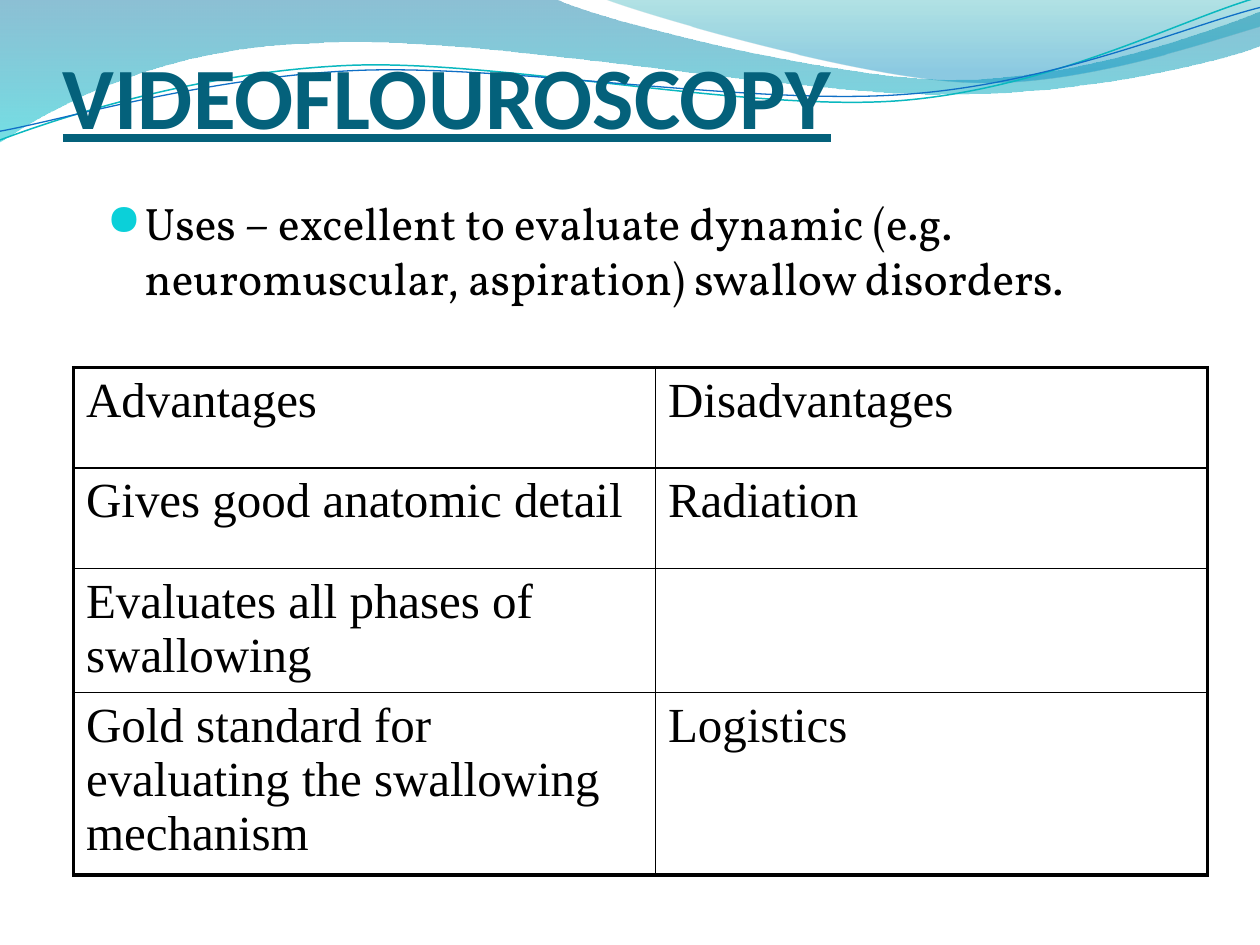
import pptx
import pptx.dml.color
import pptx.enum.text
import pptx.oxml.ns
import pptx.util
from lxml import etree

Pt = pptx.util.Pt
qn = pptx.oxml.ns.qn
COLORS = {
    "title": "04617B", "text": "000000", "bullet": "0BD0D9",
    "line_teal": "0AB8BF", "line_blue": "0F6FC6",
    "wave_top": "0074A1", "wave_bottom": "00C6CF",
    "crest_top": "00A1A9", "crest_bottom": "008BBF",
}


def color(name):
    return pptx.dml.color.RGBColor.from_string(COLORS[name])


def write_text(frame, text, font, size, fill="text", bold=False, underline=False):
    frame.word_wrap = True
    paragraph = frame.paragraphs[0]
    run = paragraph.add_run()
    run.text = text
    run.font.name = font
    run.font.size = Pt(size)
    run.font.bold = bold
    run.font.underline = underline
    run.font.color.rgb = color(fill)
    return paragraph


def add_curve(shapes, start, segments, closed):
    """Draw straight (2 numbers) and cubic Bezier (6 numbers) segments, in points."""
    builder = shapes.build_freeform(Pt(start[0]), Pt(start[1]))
    for segment in segments:
        pairs = zip(segment[::2], segment[1::2])
        builder.add_line_segments([(Pt(x), Pt(y)) for x, y in pairs], close=False)
    if closed:
        builder.add_line_segments([], close=True)
    shape = builder.convert_to_shape()
    shape.shadow.inherit = False
    lines = iter(shape._element.findall(".//" + qn("a:lnTo")))
    for segment in segments:
        parts = [next(lines) for _ in range(len(segment) // 2)]
        if len(parts) == 3:
            curve = etree.Element(qn("a:cubicBezTo"))
            parts[0].addprevious(curve)
            for part in parts:
                curve.append(part[0])
                part.getparent().remove(part)
    return shape


presentation = pptx.Presentation()
presentation.slide_width = Pt(720)
presentation.slide_height = Pt(540)
slide = presentation.slides.add_slide(presentation.slide_layouts[6])

# Wave bands: start, segments, gradient stops (position, colour, opacity %)
bands = [
    ((0, 0),
     [(317, -0.7), (343, 12, 478, 45.4, 546, 45.4), (614, 45.4, 690, 18.7, 720, 6.5),
      (720.7, 26), (708, 31.7, 626, 54.7, 537, 54), (448, 54, 275, 20.2, 185, 24.5),
      (93, 26, 33, 59.8, -0.7, 81.4), (0, 0)],
     [(0, "wave_top", 45), (1, "wave_bottom", 55)]),
    ((345, -0.7),
     [(366.5, 8, 491, 44.6, 553.7, 46.8), (616, 49.7, 692, 23, 720, 15), (720, 0),
      (345, -0.7)],
     [(0, "crest_top", 30), (0.8, "crest_bottom", 45)]),
]
for start, segments, stops in bands:
    band = add_curve(slide.shapes, start, segments, closed=True)
    band.line.fill.background()
    band.fill.gradient()
    band.fill.gradient_angle = 270
    for stop, (position, name, _) in zip(band.fill.gradient_stops, stops):
        stop.position = position
        stop.color.rgb = color(name)
    stop_colors = band._element.spPr.findall(".//" + qn("a:gs") + "/" + qn("a:srgbClr"))
    for element, (_, _, opacity) in zip(stop_colors, stops):
        etree.SubElement(element, qn("a:alpha"), val=str(opacity * 1000))

wave_lines = [
    ((0, 80), [(34.6, 67, 113.8, 41, 199.4, 37.4), (284.4, 33.8, 427, 64, 513.4, 57.6),
               (599.8, 51, 675.4, 10.8, 718.6, -1.4)], "line_teal", 0.85),
    ((0, 75), [(33.8, 69, 118, 44, 203.8, 40.3), (290, 36.7, 430, 60.5, 516.2, 54),
               (602, 48.2, 677.5, 15, 720, 4.3)], "line_blue", 0.75),
]
for start, segments, name, width in wave_lines:
    wave = add_curve(slide.shapes, start, segments, closed=False)
    wave.fill.background()
    wave.line.color.rgb = color(name)
    wave.line.width = Pt(width)

title = slide.shapes.add_textbox(Pt(36), Pt(-6), Pt(648), Pt(90)).text_frame
title.margin_left = title.margin_right = title.margin_bottom = 0
title.vertical_anchor = pptx.enum.text.MSO_ANCHOR.BOTTOM
write_text(title, "VIDEOFLOUROSCOPY", "Calibri", 50, fill="title", bold=True, underline=True)

body = slide.shapes.add_textbox(Pt(54), Pt(108), Pt(612), Pt(139)).text_frame
paragraph = write_text(
    body, "Uses – excellent to evaluate dynamic (e.g. neuromuscular, aspiration) swallow disorders.",
    "Vollkorn", 26)
properties = paragraph._p.get_or_add_pPr()
properties.set("marL", str(Pt(21.6)))
properties.set("indent", str(Pt(-21.6)))
bullet_color = etree.SubElement(properties, qn("a:buClr"))
etree.SubElement(bullet_color, qn("a:srgbClr"), val=COLORS["bullet"])
etree.SubElement(properties, qn("a:buSzPct"), val="95000")
etree.SubElement(properties, qn("a:buFont"), typeface="OpenSymbol")
etree.SubElement(properties, qn("a:buChar"), char="●")

rows = [
    ("Advantages", "Disadvantages"),
    ("Gives good anatomic detail", "Radiation"),
    ("Evaluates all phases of swallowing", ""),
    ("Gold standard for evaluating the swallowing mechanism", "Logistics"),
]
row_heights = [57.4, 57.4, 70.4, 102.8]
column_widths = [332.6, 315.4]
table = slide.shapes.add_table(len(rows), 2, Pt(42), Pt(210), Pt(648), Pt(288)).table
table.first_row = table.horz_banding = False
for column, width in zip(table.columns, column_widths):
    column.width = Pt(width)
for row_index, (row, height) in enumerate(zip(rows, row_heights)):
    table.rows[row_index].height = Pt(height)
    for column_index, text in enumerate(row):
        cell = table.cell(row_index, column_index)
        cell.margin_bottom = 0
        if text:
            write_text(cell.text_frame, text, "Times New Roman", 28)
        outer_sides = {"a:lnL": column_index == 0, "a:lnR": column_index == 1,
                       "a:lnT": row_index == 0, "a:lnB": row_index == len(rows) - 1}
        for side, is_outer in outer_sides.items():
            border = etree.SubElement(cell._tc.get_or_add_tcPr(), qn(side),
                                      w=str(Pt(2.25 if is_outer else 1)))
            border_fill = etree.SubElement(border, qn("a:solidFill"))
            etree.SubElement(border_fill, qn("a:srgbClr"), val=COLORS["text"])
        cell.fill.background()

presentation.save("out.pptx")
